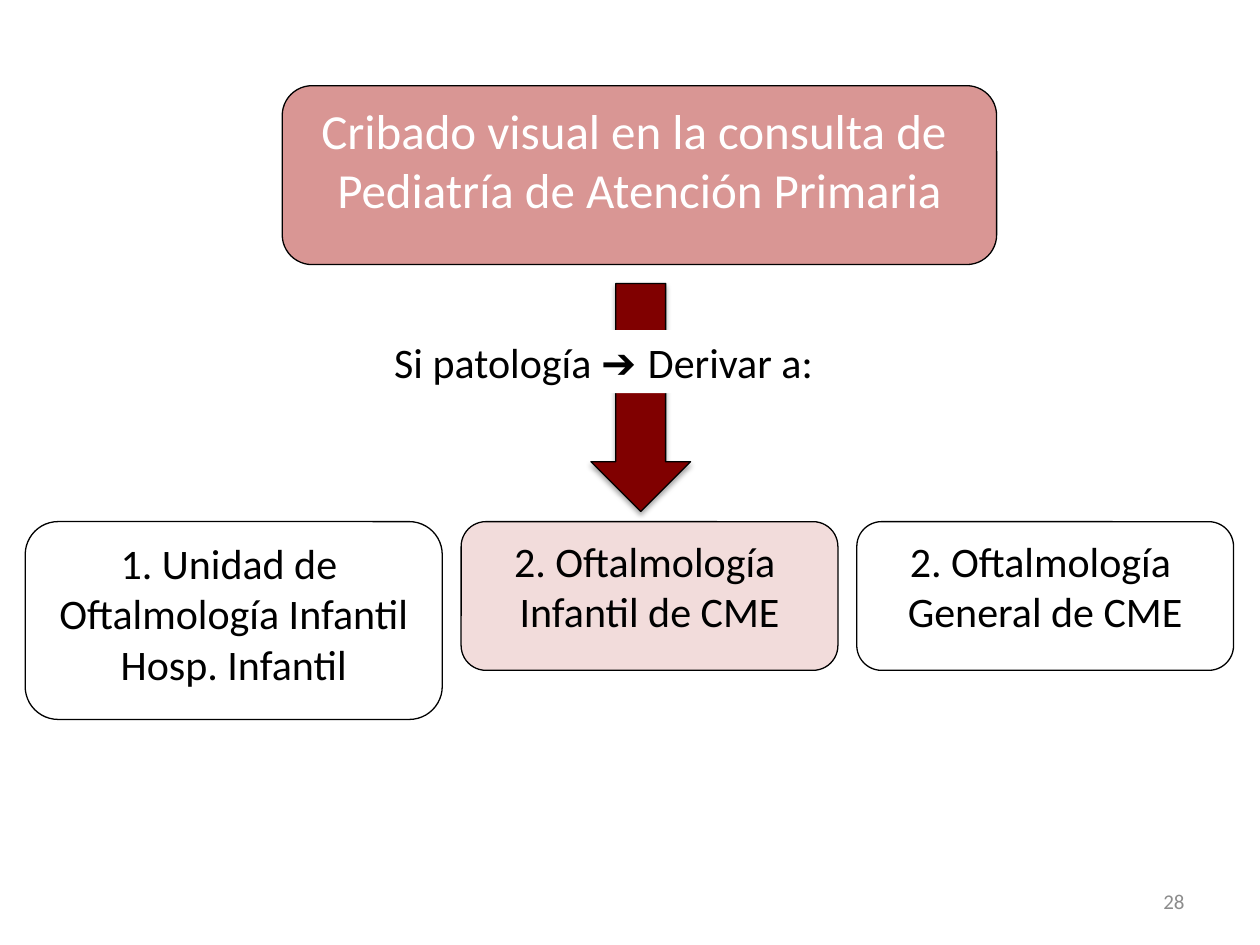
from lxml import etree
from pptx import Presentation
from pptx.dml.color import RGBColor
from pptx.enum.shapes import MSO_SHAPE as Shape
from pptx.enum.text import MSO_ANCHOR as Anchor, MSO_AUTO_SIZE as AutoSize, PP_ALIGN as Align
from pptx.oxml.ns import qn
from pptx.util import Inches, Pt

COLORS = {
    "black": "000000",
    "white": "FFFFFF",
    "arrow": "800000",
    "screening": "D99694",
    "selected": "F2DCDB",
    "number": "8C8C8C",
}


def color(name):
    return RGBColor.from_string(COLORS[name])


def add_span(para, text, size, ink, font="Calibri"):
    span = para.add_run()
    span.text = text
    span.font.size = Pt(size)
    span.font.name = font
    span.font.color.rgb = color(ink)


def add_outlined(page, kind, box, fill):
    shape = page.shapes.add_shape(kind, *(Inches(length) for length in box))
    shape.shadow.inherit = False
    if fill:
        shape.fill.solid()
        shape.fill.fore_color.rgb = color(fill)
    else:
        shape.fill.background()
    shape.line.color.rgb = color("black")
    shape.line.width = Pt(0.75)
    return shape


def add_step(page, box, lines, size=24, fill=None, ink="black"):
    """Rounded box with one centred paragraph per line."""
    frame = add_outlined(page, Shape.ROUNDED_RECTANGLE, box, fill).text_frame
    frame.word_wrap = False
    frame.vertical_anchor = Anchor.TOP
    for index, line in enumerate(lines):
        para = frame.add_paragraph() if index else frame.paragraphs[0]
        para.alignment = Align.CENTER
        add_span(para, line, size, ink)


def add_arrow(page, box):
    arrow = add_outlined(page, Shape.DOWN_ARROW, box, "arrow")
    effects = arrow._element.spPr.find(qn("a:effectLst"))
    shadow = etree.SubElement(
        effects, qn("a:outerShdw"), blurRad=str(Pt(3.1)), dist=str(Pt(1.8)),
        dir="5400000", rotWithShape="0")
    tint = etree.SubElement(shadow, qn("a:srgbClr"), val=COLORS["black"])
    etree.SubElement(tint, qn("a:alpha"), val="35000")


def add_text(page, box):
    return page.shapes.add_textbox(*(Inches(length) for length in box))


def add_condition(page, box):
    """White label that lies across the arrow."""
    label = add_text(page, box)
    label.fill.solid()
    label.fill.fore_color.rgb = color("white")
    frame = label.text_frame
    frame.word_wrap = True
    frame.auto_size = AutoSize.SHAPE_TO_FIT_TEXT
    para = frame.paragraphs[0]
    for text, font in (("Si patología ", "Calibri"), ("➔ ", "Arial"),
                       ("Derivar a:", "Calibri")):
        add_span(para, text, 24, "black", font)


def add_page_number(page, box):
    frame = add_text(page, box).text_frame
    frame.word_wrap = True
    frame.vertical_anchor = Anchor.MIDDLE
    para = frame.paragraphs[0]
    para.alignment = Align.RIGHT
    add_span(para, "28", 12, "number")


def add_referrals(page, left, top, gap=0.15):
    """Row of referral destinations, evenly spaced."""
    referrals = (
        (3.31, 1.57, None, ("1. Unidad de ", "Oftalmología Infantil", "Hosp. Infantil")),
        (2.99, 1.18, "selected", ("2. Oftalmología ", "Infantil de CME")),
        (2.99, 1.18, None, ("2. Oftalmología ", "General de CME")),
    )
    for width, height, fill, lines in referrals:
        add_step(page, (left, top, width, height), lines, fill=fill)
        left += width + gap


def main():
    deck = Presentation()
    deck.slide_width, deck.slide_height = Inches(10), Inches(7.5)
    page = deck.slides.add_slide(deck.slide_layouts[6])

    add_arrow(page, (4.69, 2.25, 0.79, 1.81))
    add_page_number(page, (7.17, 6.95, 2.33, 0.4))
    add_step(page, (2.24, 0.68, 5.67, 1.42),
             ("Cribado visual en la consulta de ", "Pediatría de Atención Primaria"),
             size=28, fill="screening", ink="white")
    add_referrals(page, 0.2, 4.14)
    add_condition(page, (3.03, 2.62, 4.02, 0.5))

    deck.save("out.pptx")


if __name__ == "__main__":
    main()
